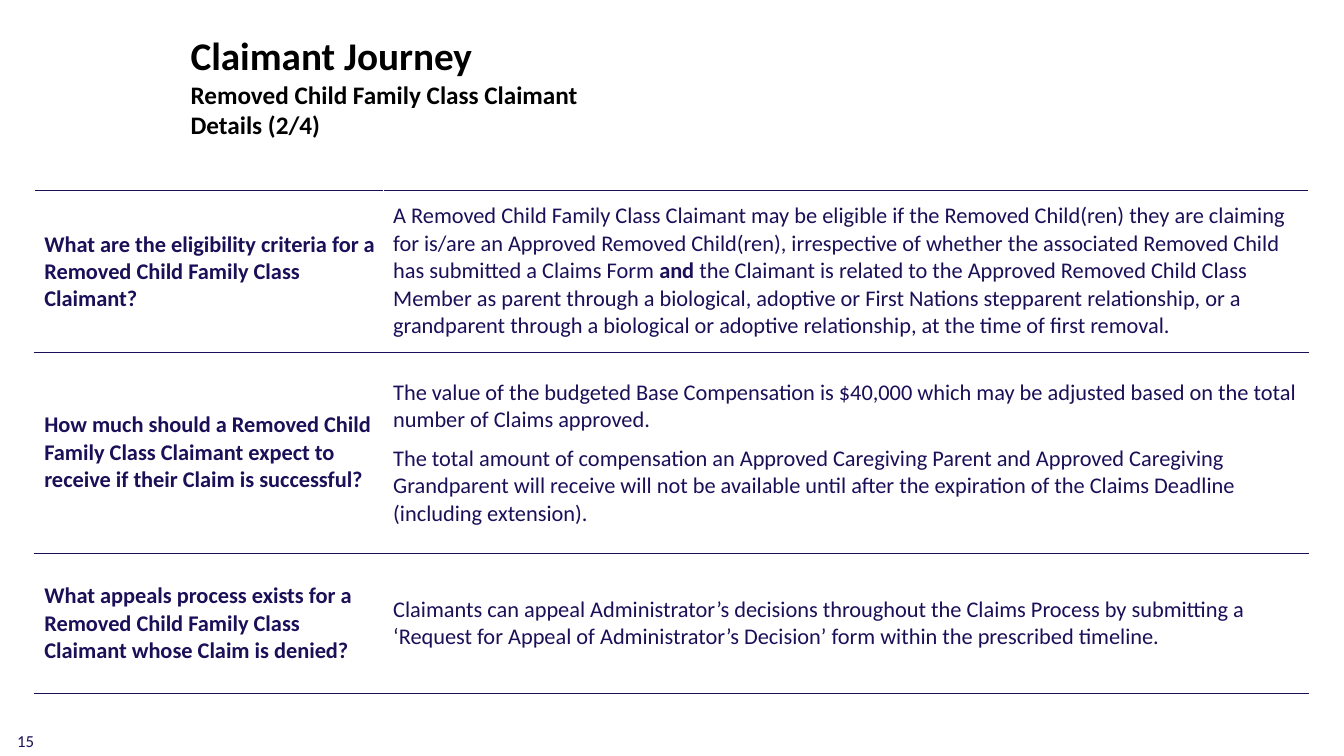
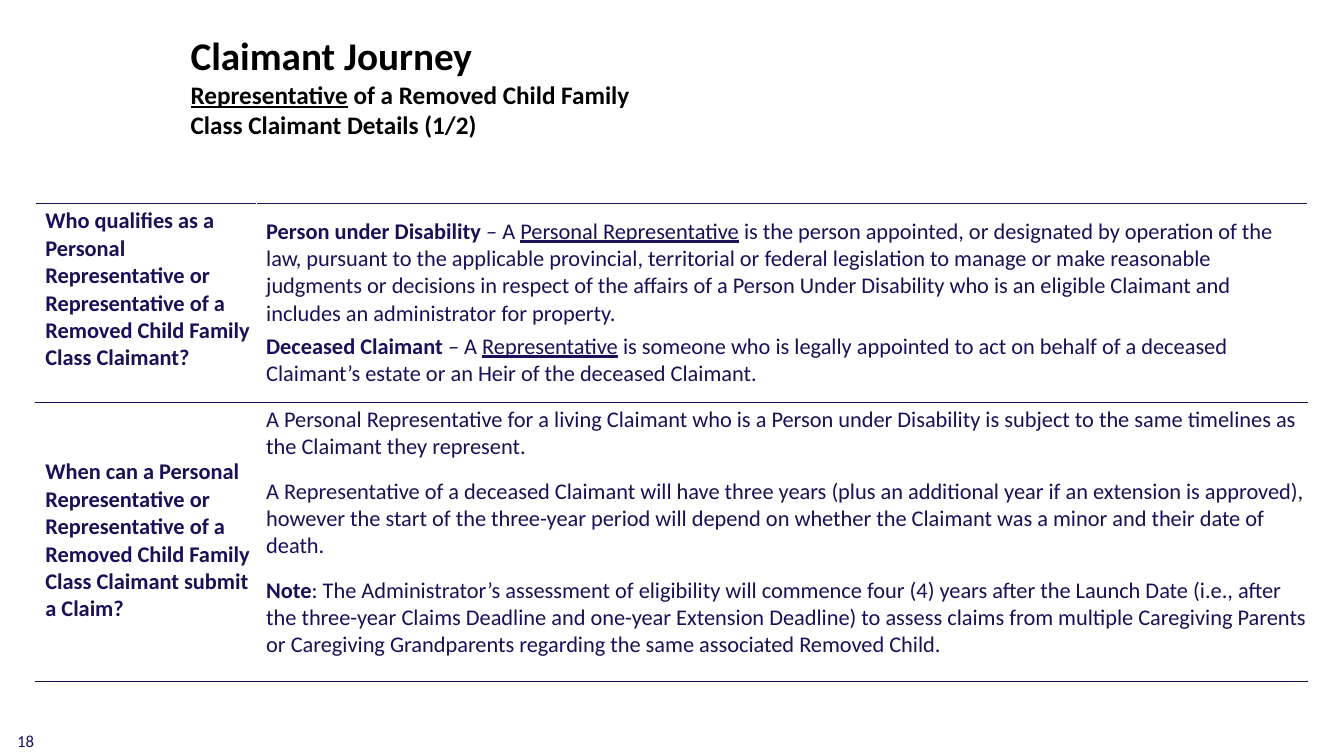
import pptx
import pptx.util
import pptx.dml.color
import pptx.enum.text
import lxml.etree

Pt = pptx.util.Pt
Inches = pptx.util.Inches
ink = {"navy": "1B0F58", "black": "000000", "white": "FFFFFF"}
font = "Calibri"
edges = {"lnL": "white", "lnR": "white", "lnT": "navy", "lnB": "navy"}

deck = pptx.Presentation()
deck.slide_width = Inches(13.33)
deck.slide_height = Inches(7.5)
wide = deck.slide_width / 100
high = deck.slide_height / 100

pages = [
    {
        "num": "15",
        "head": [("b", "Removed Child Family Class Claimant Details (2/4)")],
        "at": (2.55, 25.2),
        "cols": (25.96, 68.87),
        "rows": (21.47, 26.53, 18.53),
        "gap": 8.1,
        "cells": [
            [
                (0.4, [[("b", "What are the eligibility criteria for a Removed Child Family Class Claimant?")]]),
                (0.12, [[
                    ("", "A Removed Child Family Class Claimant may be eligible if the Removed Child(ren) "
                         "they are claiming for is/are an Approved Removed Child(ren), irrespective of whether "
                         "the associated Removed Child has submitted a Claims Form "),
                    ("b", "and "),
                    ("", "the Claimant is related to the Approved Removed Child Class Member as parent through "
                         "a biological, adoptive or First Nations stepparent relationship, or a grandparent "
                         "through a biological or adoptive relationship, at the time of first removal."),
                ]]),
            ],
            [
                (0.58, [[("b", "How much should a Removed Child Family Class Claimant expect to receive if their Claim is successful?")]]),
                (0.26, [
                    [("", "The value of the budgeted Base Compensation is $40,000 which may be adjusted based "
                          "on the total number of Claims approved.")],
                    [("", "The total amount of compensation an Approved Caregiving Parent and Approved "
                          "Caregiving Grandparent will receive will not be available until after the "
                          "expiration of the Claims Deadline (including extension).")],
                ]),
            ],
            [
                (0.29, [[("b", "What appeals process exists for a Removed Child Family Class Claimant whose Claim is denied?")]]),
                (0.42, [[("", "Claimants can appeal Administrator’s decisions throughout the Claims Process by "
                              "submitting a ‘Request for Appeal of Administrator’s Decision’ form within the "
                              "prescribed timeline.")]]),
            ],
        ],
    },
    {
        "num": "18",
        "head": [("bu", "Representative"), ("b", " of a Removed Child Family Class Claimant Details (1/2)")],
        "at": (2.63, 26.93),
        "cols": (16.43, 78.24),
        "rows": (26.27, 36.93),
        "gap": 12,
        "cells": [
            [
                (0.04, [[("b", "Who qualifies as a Personal Representative or Representative of a Removed Child Family Class Claimant?")]]),
                (0.14, [
                    [
                        ("b", "Person under Disability "),
                        ("", "– A "),
                        ("u", "Personal Representative"),
                        ("", " is the person appointed, or designated by operation of the law, pursuant to the "
                             "applicable provincial, territorial or federal legislation to manage or make "
                             "reasonable judgments or decisions in respect of the affairs of a Person Under "
                             "Disability who is an eligible Claimant and includes an administrator for property."),
                    ],
                    [
                        ("b", "Deceased Claimant "),
                        ("", "– A "),
                        ("u", "Representative"),
                        ("", " is someone who is legally appointed to act on behalf of a deceased Claimant’s "
                             "estate or an Heir of the deceased Claimant."),
                    ],
                ], 4),
            ],
            [
                (0.56, [[("b", "When can a Personal Representative or Representative of a Removed Child Family Class Claimant submit a Claim?")]]),
                (0.04, [
                    [("", "A Personal Representative for a living Claimant who is a Person under Disability is "
                          "subject to the same timelines as the Claimant they represent.")],
                    [("", "A Representative of a deceased Claimant will have three years (plus an additional "
                          "year if an extension is approved), however the start of the three-year period will "
                          "depend on whether the Claimant was a minor and their date of death.")],
                    [
                        ("b", "Note"),
                        ("", ": The Administrator’s assessment of eligibility will commence four (4) years after "
                             "the Launch Date (i.e., after the three-year Claims Deadline and one-year Extension "
                             "Deadline) to assess claims from multiple Caregiving Parents or Caregiving "
                             "Grandparents regarding the same associated Removed Child."),
                    ],
                ]),
            ],
        ],
    },
]


def write(para, runs, size, tint):
    for style, words in runs:
        run = para.add_run()
        run.text = words
        run.font.name = font
        run.font.size = Pt(size)
        run.font.bold = "b" in style
        run.font.underline = "u" in style
        run.font.color.rgb = pptx.dml.color.RGBColor.from_string(ink[tint])


def box(slide, left, top, width, height, inset):
    shape = slide.shapes.add_textbox(
        round(left * wide), round(top * high), round(width * wide), round(height * high))
    frame = shape.text_frame
    frame.word_wrap = True
    frame.margin_left, frame.margin_top = Inches(inset[0]), Inches(inset[1])
    frame.margin_right = frame.margin_bottom = 0
    return frame


for page in pages:
    slide = deck.slides.add_slide(deck.slide_layouts[6])

    title = box(slide, 12.98, -0.4, 33.91, 19.07, (0.16, 0.34))
    write(title.paragraphs[0], [("b", "Claimant Journey")], 28, "black")
    sub = title.add_paragraph()
    sub.space_before = Pt(0.7)
    write(sub, page["head"], 18, "black")

    foot = box(slide, 0.98, 97.07, 2.03, 2.53, (0.04, 0)).paragraphs[0]
    foot.line_spacing = Pt(12.4)
    write(foot, [("", page["num"])], 12, "navy")

    left, top = page["at"]
    cols, rows = page["cols"], page["rows"]
    table = slide.shapes.add_table(
        len(rows), len(cols), round(left * wide), round(top * high),
        round(sum(cols) * wide), round(sum(rows) * high)).table
    table.first_row = table.horz_banding = False
    for col, share in zip(table.columns, cols):
        col.width = round(share * wide)
    for row, share in zip(table.rows, rows):
        row.height = round(share * high)

    for row, line in zip(table.rows, page["cells"]):
        for cell, (inset, paras, *gap) in zip(row.cells, line):
            cell.margin_left, cell.margin_top = Inches(0.1), Inches(inset)
            cell.margin_right = cell.margin_bottom = 0
            cell.vertical_anchor = pptx.enum.text.MSO_ANCHOR.TOP
            props = cell._tc.get_or_add_tcPr()
            for edge, tint in edges.items():
                rule = lxml.etree.SubElement(props, pptx.oxml.ns.qn("a:" + edge), w=str(Pt(1)))
                fill = lxml.etree.SubElement(rule, pptx.oxml.ns.qn("a:solidFill"))
                lxml.etree.SubElement(fill, pptx.oxml.ns.qn("a:srgbClr"), val=ink[tint])
            cell.fill.background()
            for spot, runs in enumerate(paras):
                para = cell.text_frame.add_paragraph() if spot else cell.text_frame.paragraphs[0]
                if spot:
                    para.space_before = Pt(gap[0] if gap else page["gap"])
                write(para, runs, 16, "navy")

deck.save("out.pptx")
